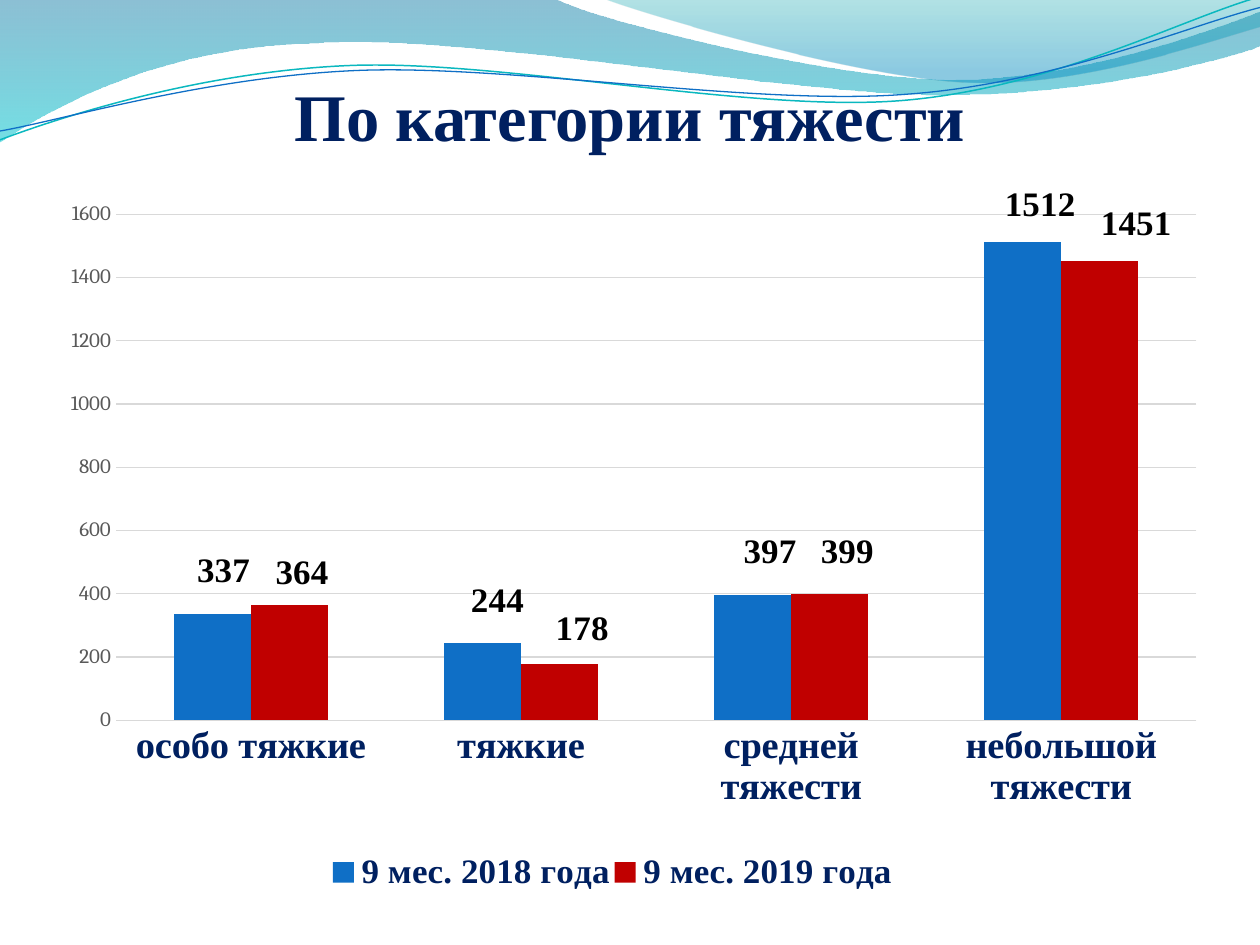
import math
from dataclasses import dataclass

from lxml import etree
from pptx import Presentation, util as u
from pptx.chart.data import CategoryChartData
from pptx.dml.color import RGBColor
from pptx.enum import chart as ch, text
from pptx.oxml import parse_xml
from pptx.oxml.ns import nsdecls, qn


@dataclass(frozen=True)
class Theme:
    """Colours, fonts and type sizes of the slide."""
    navy: str = "002060"
    blue: str = "0F6FC6"
    red: str = "C00000"
    teal: str = "0AB8BF"
    black: str = "000000"
    gray: str = "595959"
    grid: str = "D9D9D9"
    serif: str = "Times New Roman"
    body: str = "Cambria"
    title_size: int = 38
    category_size: int = 22
    label_size: int = 20
    value_size: int = 12
    base_size: int = 10


THEME = Theme()
CHART_WIDTH, CHART_HEIGHT = 9.3, 5.83
WAVE_TILT = 2.7

BANDS = [
    ([(0, 0), (4.4, -0.01), (4.76, 0.17, 6.64, 0.63, 7.58, 0.63),
      (8.53, 0.63, 9.58, 0.26, 10, 0.09), (10.01, 0.36),
      (9.83, 0.44, 8.7, 0.76, 7.46, 0.75), (6.22, 0.75, 3.82, 0.28, 2.57, 0.34),
      (1.29, 0.36, 0.46, 0.83, -0.01, 1.13)],
     [(0, "0074A1", 45), (1, "00C6CF", 55)]),
    ([(4.79, -0.01), (5.09, 0.11, 6.82, 0.62, 7.69, 0.65),
      (8.56, 0.69, 9.61, 0.32, 10, 0.21), (10, 0)],
     [(0, "00A1A9", 30), (0.8, "008BBF", 45)]),
]
WAVES = [
    ([(0, 1.11), (0.48, 0.93, 1.58, 0.57, 2.77, 0.52),
      (3.95, 0.47, 5.93, 0.89, 7.13, 0.8), (8.33, 0.71, 9.38, 0.15, 9.98, -0.02)],
     (4.99, 0.57), THEME.teal, 0.85),
    ([(0, 1.04), (0.47, 0.96, 1.64, 0.61, 2.83, 0.56),
      (4.03, 0.51, 5.97, 0.84, 7.17, 0.75), (8.36, 0.67, 9.41, 0.21, 10, 0.06)],
     (5, 0.59), THEME.blue, 0.75),
]
CATEGORIES = ["особо тяжкие", "тяжкие", "средней тяжести", "небольшой тяжести"]
SERIES = [
    ("9 мес. 2018 года", THEME.blue, [337, 244, 397, 1512],
     [(0.09, -0.15), (0.12, -0.15), (0.14, -0.15), (0.14, -0.11)]),
    ("9 мес. 2019 года", THEME.red, [364, 178, 399, 1451],
     [(0.1, -0.07), (0.18, -0.09), (0.14, -0.15), (0.29, -0.11)]),
]


def rgb(code):
    """Return a colour from its hex code."""
    return RGBColor.from_string(code)


def style_font(font, size, color, name=THEME.serif, bold=True):
    """Apply size, colour, typeface and weight to a font."""
    font.size, font.name, font.bold = u.Pt(size), name, bold
    font.color.rgb = rgb(color)


def pairs(step):
    """Split a path step into its points."""
    return list(zip(step[::2], step[1::2]))


def turn_path(path, center, degrees):
    """Turn every point of a path clockwise about a center."""
    cos, sin = math.cos(math.radians(degrees)), math.sin(math.radians(degrees))
    cx, cy = center
    return [tuple(value for x, y in pairs(step) for value in (
        cx + (x - cx) * cos - (y - cy) * sin,
        cy + (x - cx) * sin + (y - cy) * cos)) for step in path]


def add_outline(page, path, close):
    """Add a freeform of straight and cubic Bezier steps in inches."""
    points = [(u.Inches(x), u.Inches(y)) for step in path for x, y in pairs(step)]
    builder = page.shapes.build_freeform(*points[0], scale=1.0)
    builder.add_line_segments(points[1:], close=close)
    shape = builder.convert_to_shape()
    shape.shadow.inherit = False
    lines = iter(list(shape._element.spPr.iter(qn("a:lnTo"))))
    for step in path[1:]:
        nodes = [next(lines) for _ in pairs(step)]
        if len(nodes) == 3:
            curve = etree.Element(qn("a:cubicBezTo"))
            nodes[0].addprevious(curve)
            for node in nodes:
                curve.append(node[0])
                node.getparent().remove(node)
    return shape


def add_band(page, path, stops):
    """Add a closed band with a translucent vertical gradient."""
    shape = add_outline(page, path, True)
    shape.line.fill.background()
    shape.fill.gradient()
    shape.fill.gradient_angle = 270
    for stop, (position, color, _) in zip(shape.fill.gradient_stops, stops):
        stop.position, stop.color.rgb = position, rgb(color)
    for node, (_, _, alpha) in zip(shape._element.spPr.iter(qn("a:srgbClr")), stops):
        etree.SubElement(node, qn("a:alpha")).set("val", str(alpha * 1000))


def add_wave(page, path, center, color, width):
    """Add an open, slightly turned curve."""
    shape = add_outline(page, turn_path(path, center, WAVE_TILT), False)
    shape.rotation = 360 - WAVE_TILT
    shape.fill.background()
    shape.line.color.rgb, shape.line.width = rgb(color), u.Pt(width)


def add_title(page, wording):
    """Add the centred title."""
    box = page.shapes.add_textbox(u.Inches(0), u.Inches(0.36), u.Inches(10), u.Inches(0.87))
    frame = box.text_frame
    frame.text, frame.word_wrap = wording, True
    frame.vertical_anchor = text.MSO_ANCHOR.BOTTOM
    frame.margin_left = frame.margin_right = frame.margin_bottom = 0
    para = frame.paragraphs[0]
    para.alignment = text.PP_ALIGN.CENTER
    style_font(para.runs[0].font, THEME.title_size, THEME.navy)


def manual_layout(x, y, w=None, h=None, **modes):
    """Return a chart layout element for a place given in inches."""
    layout = parse_xml(f"<c:layout {nsdecls('c')}><c:manualLayout/></c:layout>")
    values = dict(modes, x=x / CHART_WIDTH, y=y / CHART_HEIGHT)
    if w:
        values.update(w=w / CHART_WIDTH, h=h / CHART_HEIGHT)
    for name, value in values.items():
        etree.SubElement(layout[0], qn(f"c:{name}")).set("val", str(value))
    return layout


def style_axes(chart):
    """Format both axes and the gridlines."""
    category, value = chart.category_axis, chart.value_axis
    for axis in (category, value):
        axis.major_tick_mark = axis.minor_tick_mark = ch.XL_TICK_MARK.NONE
        axis.format.line.fill.background()
    style_font(category.tick_labels.font, THEME.category_size, THEME.navy)
    style_font(value.tick_labels.font, THEME.value_size, THEME.gray, THEME.body, False)
    value.minimum_scale, value.maximum_scale, value.major_unit = 0, 1600, 200
    grid = value.major_gridlines.format.line
    grid.color.rgb, grid.width = rgb(THEME.grid), u.Pt(0.75)


def style_series(series, color, offsets):
    """Colour a series and shift its value labels."""
    series.format.fill.solid()
    series.format.fill.fore_color.rgb = rgb(color)
    labels = series.data_labels
    labels.show_value = True
    style_font(labels.font, THEME.label_size, THEME.black)
    for index in range(len(offsets)):
        label = series.points[index].data_label
        label.position = ch.XL_LABEL_POSITION.OUTSIDE_END
        style_font(label.font, THEME.label_size, THEME.black)
    for node, (x, y) in zip(series._element.iter(qn("c:dLbl")), offsets):
        node.insert(1, manual_layout(x, y))
    for node in series._element.iter(qn("c:showLeaderLines")):
        node.set("val", "0")


def style_legend(chart):
    """Place the legend below the columns."""
    chart.has_legend = True
    legend = chart.legend
    legend.position = ch.XL_LEGEND_POSITION.BOTTOM
    legend.include_in_layout = False
    style_font(legend.font, THEME.label_size, THEME.navy)
    for old in legend._element.findall(qn("c:layout")):
        legend._element.remove(old)
    legend._element.find(qn("c:legendPos")).addnext(
        manual_layout(2.41, 5.22, 4.51, 0.45, xMode="edge", yMode="edge"))


def add_column_chart(page):
    """Add the clustered column chart."""
    data = CategoryChartData()
    data.categories = CATEGORIES
    for name, _, values, _ in SERIES:
        data.add_series(name, values)
    chart = page.shapes.add_chart(
        ch.XL_CHART_TYPE.COLUMN_CLUSTERED, u.Inches(0.2), u.Inches(1.47),
        u.Inches(CHART_WIDTH), u.Inches(CHART_HEIGHT), data).chart
    style_font(chart.font, THEME.base_size, THEME.black, THEME.body, False)
    chart.has_title = False
    style_legend(chart)
    style_axes(chart)
    plot = chart.plots[0]
    plot.gap_width, plot.overlap, plot.vary_by_categories = 150, 0, False
    for series, (_, color, _, offsets) in zip(plot.series, SERIES):
        style_series(series, color, offsets)
    area = chart._chartSpace.chart.plotArea
    for old in area.findall(qn("c:layout")):
        area.remove(old)
    area.insert(0, manual_layout(0.72, 0.1, 8.58, 4.11, layoutTarget="inner",
                                 xMode="edge", yMode="edge"))


def main():
    """Build and save the slide."""
    deck = Presentation()
    deck.slide_width, deck.slide_height = u.Inches(10), u.Inches(7.5)
    page = deck.slides.add_slide(deck.slide_layouts[6])
    for band in BANDS:
        add_band(page, *band)
    for wave in WAVES:
        add_wave(page, *wave)
    add_title(page, "По категории тяжести")
    add_column_chart(page)
    deck.save("out.pptx")


if __name__ == "__main__":
    main()
